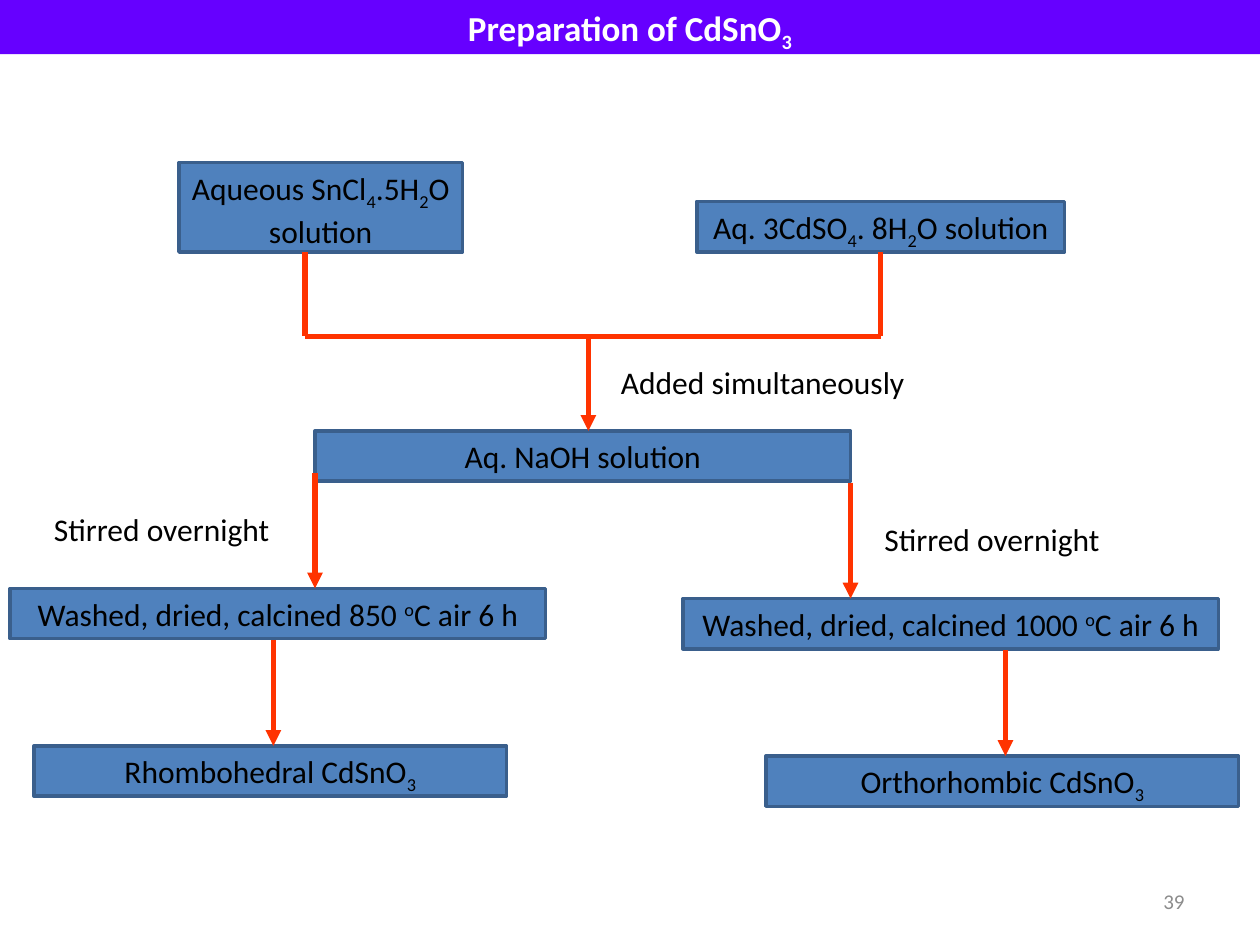
from dataclasses import dataclass

from lxml.etree import SubElement
from pptx import Presentation
from pptx.dml.color import RGBColor as RGB
from pptx.enum.shapes import MSO_CONNECTOR as Link, MSO_SHAPE as Shape
from pptx.enum.text import MSO_ANCHOR as Anchor, MSO_AUTO_SIZE as Fit, PP_ALIGN as Align
from pptx.oxml.ns import qn
from pptx.util import Inches, Pt


@dataclass(frozen=True)
class Theme:
    font: str = "Calibri"
    body: int = 18
    head: int = 20
    small: int = 12
    ink: RGB = RGB.from_string("000000")
    white: RGB = RGB.from_string("FFFFFF")
    gray: RGB = RGB.from_string("8C8C8C")
    fill: RGB = RGB.from_string("4F81BD")
    edge: RGB = RGB.from_string("3A5F8C")
    band: RGB = RGB.from_string("6600FF")
    flow: RGB = RGB.from_string("FF3300")


SHIFT = {"_": "-25000", "^": "30000"}


def write(frame, text, theme, size=None, color=None, bold=False,
          align=Align.LEFT, anchor=Anchor.TOP, fit=Fit.SHAPE_TO_FIT_TEXT):
    """Fill a frame; parts between bars that start with _ or ^ are sub- or superscript."""
    frame.word_wrap = True
    frame.auto_size = fit
    frame.vertical_anchor = anchor
    para = frame.paragraphs[0]
    para.alignment = align
    for part in text.split("|"):
        run = para.add_run()
        run.text = part.lstrip("_^")
        font = run.font
        font.name = theme.font
        font.size = Pt(size or theme.body)
        font.bold = bold
        font.color.rgb = color or theme.ink
        if part[0] in SHIFT:
            run._r.get_or_add_rPr().set("baseline", SHIFT[part[0]])


class Chart:
    def __init__(self, slide, theme):
        self.slide = slide
        self.theme = theme

    def box(self, text, x, y, w, h=0.4, fill=None, edge=True, **fmt):
        spot = [Inches(v) for v in (x, y, w, h)]
        shape = self.slide.shapes.add_shape(Shape.RECTANGLE, *spot)
        shape.shadow.inherit = False
        shape.fill.solid()
        shape.fill.fore_color.rgb = fill or self.theme.fill
        if edge:
            shape.line.color.rgb = self.theme.edge
            shape.line.width = Pt(2)
        else:
            shape.line.fill.background()
        write(shape.text_frame, text, self.theme, align=Align.CENTER, **fmt)
        return shape

    def label(self, text, x, y, w, h=0.4, **fmt):
        spot = [Inches(v) for v in (x, y, w, h)]
        write(self.slide.shapes.add_textbox(*spot).text_frame, text, self.theme, **fmt)

    def line(self, x1, y1, x2, y2, arrow=False):
        ends = [Inches(v) for v in (x1, y1, x2, y2)]
        line = self.slide.shapes.add_connector(Link.STRAIGHT, *ends)
        line.line.color.rgb = self.theme.flow
        line.line.width = Pt(3)
        if arrow:
            SubElement(line.line._get_or_add_ln(), qn("a:tailEnd"), type="triangle")
        SubElement(line._element.spPr, qn("a:effectLst"))
        return line

    def drop(self, x, top, end):
        return self.line(x, top, x, end, arrow=True)


def main():
    deck = Presentation()
    deck.slide_width, deck.slide_height = Inches(10), Inches(7.5)
    theme = Theme()
    chart = Chart(deck.slides.add_slide(deck.slide_layouts[6]), theme)

    chart.box("Preparation of CdSnO|_3", 0, 0, 10, 0.43, fill=theme.band, edge=False,
              size=theme.head, color=theme.white, bold=True)

    # Two salt solutions meet in the base
    tin_x, salt_x, join_y = 2.42, 6.99, 2.67
    chart.box("Aqueous SnCl|_4|.5H|_2|O solution", 1.42, 1.29, 2.25, 0.71)
    salt = chart.box("Aq. 3CdSO|_4|. 8H|_2|O solution", 5.53, 1.6, 2.92)
    chart.line(tin_x, 2, tin_x, join_y)
    chart.line(salt_x, 2, salt_x, join_y).begin_connect(salt, 2)
    chart.line(tin_x, join_y, salt_x, join_y)
    chart.label("Added simultaneously", 4.83, 2.83, 3.42)
    chart.box("Aq. NaOH solution", 2.5, 3.42, 4.25)
    chart.drop(4.67, join_y, 3.42)

    # Per branch: heat, phase, top of the heat box, and the x of each element
    branches = [
        ("850", "Rhombohedral", 4.67, 5.92, 2.5, 0.33, 0.08, 0.27, 2.17),
        ("1000", "Orthorhombic", 4.75, 6, 6.75, 6.92, 5.42, 6.08, 7.98),
    ]
    for heat, phase, heat_y, phase_y, stir_x, note_x, heat_x, phase_x, down_x in branches:
        chart.label("Stirred overnight", note_x, heat_y - 0.67, 2.08)
        chart.box(f"Washed, dried, calcined {heat} |^o|C air 6 h", heat_x, heat_y, 4.25)
        chart.box(f"{phase} CdSnO|_3", phase_x, phase_y, 3.75)
        chart.drop(stir_x, heat_y - 0.92, heat_y)
        chart.drop(down_x, heat_y + 0.41, phase_y)

    chart.label("39", 7.17, 6.95, 2.33, size=theme.small, color=theme.gray,
                align=Align.RIGHT, anchor=Anchor.MIDDLE, fit=Fit.NONE)
    deck.save("out.pptx")


if __name__ == "__main__":
    main()
